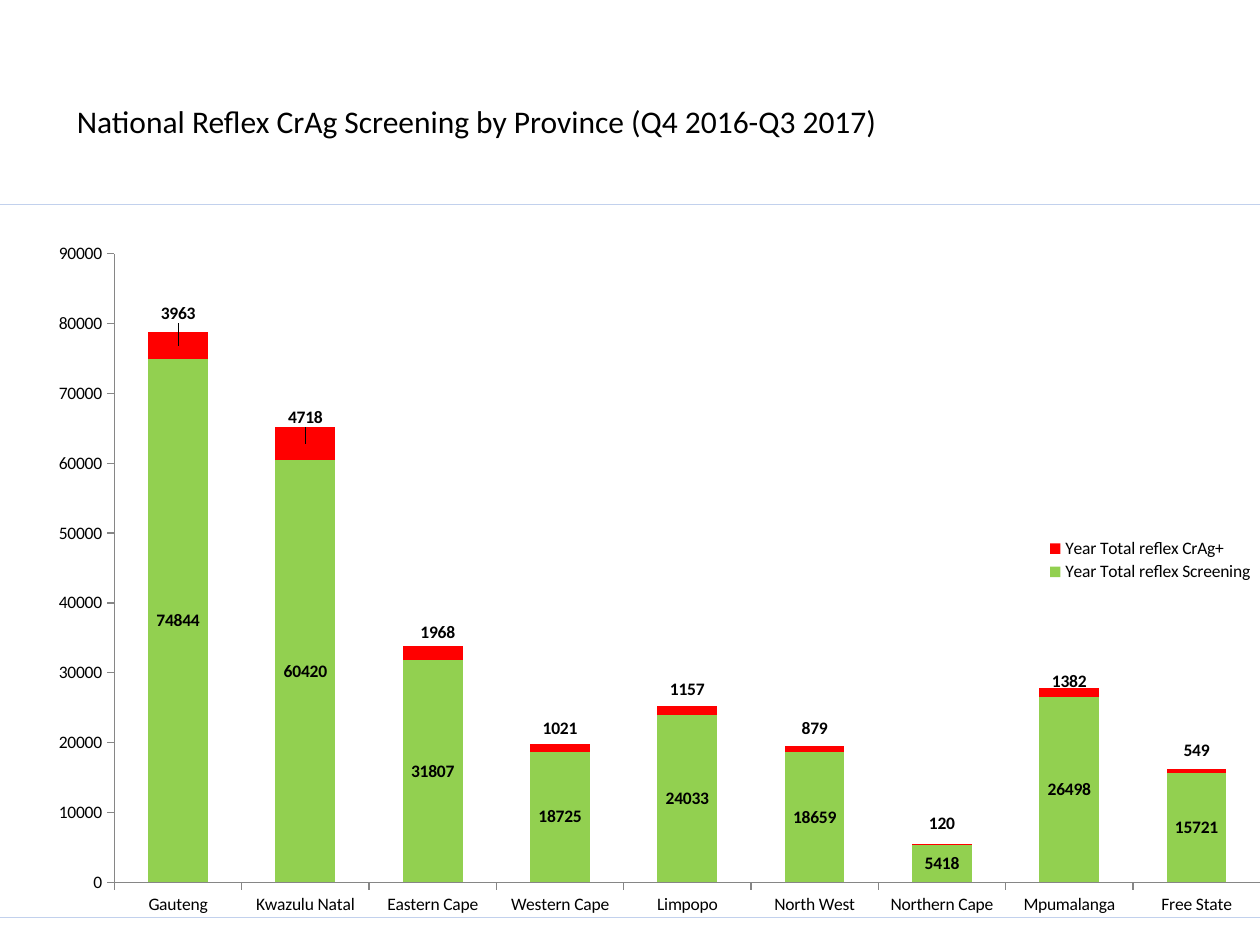
from dataclasses import dataclass

from lxml import etree
from pptx import Presentation
from pptx import util as u
from pptx.chart import data
from pptx.dml.color import RGBColor
from pptx.enum import chart as kinds
from pptx.enum import text
from pptx.oxml import parse_xml
from pptx.oxml.ns import nsdecls, qn


@dataclass(frozen=True)
class Theme:
    """Hold the colours, font and type sizes of the slide."""
    font: str = "Calibri"
    title_size: int = 18
    chart_size: int = 10
    ink: str = "000000"
    axis: str = "868686"
    border: str = "C2D1ED"
    screening: str = "92D050"
    positive: str = "FF0000"


THEME = Theme()
TITLE = "National Reflex CrAg Screening by Province (Q4 2016-Q3 2017)"
PROVINCES = (
    ("Gauteng", 74844, 3963, (0, -0.045)),
    ("Kwazulu Natal", 60420, 4718, (0, -0.037)),
    ("Eastern Cape", 31807, 1968, (0.004, -0.029)),
    ("Western Cape", 18725, 1021, (0, -0.028)),
    ("Limpopo", 24033, 1157, (0, -0.029)),
    ("North West", 18659, 879, (0, -0.028)),
    ("Northern Cape", 5418, 120, (0, -0.029)),
    ("Mpumalanga", 26498, 1382, (0, -0.016)),
    ("Free State", 15721, 549, (0, -0.029)),
)


def style_font(font, size, bold=False):
    """Apply the theme font and ink colour."""
    font.name, font.size, font.bold = THEME.font, u.Pt(size), bold
    font.color.rgb = RGBColor.from_string(THEME.ink)


def set_layout(parent, index, **values):
    """Give a chart part a manual layout as fractions of the chart."""
    for old in parent.findall(qn("c:layout")):
        parent.remove(old)
    layout = parse_xml(f"<c:layout {nsdecls('c')}><c:manualLayout/></c:layout>")
    for name, value in values.items():
        etree.SubElement(layout[0], qn(f"c:{name}")).set("val", str(value))
    parent.insert(index, layout)


def add_title(page, left, top, width, height):
    """Write the slide title on one line."""
    box = page.shapes.add_textbox(left, top, width, height)
    box.text_frame.word_wrap = False
    box.text_frame.auto_size = text.MSO_AUTO_SIZE.SHAPE_TO_FIT_TEXT
    span = box.text_frame.paragraphs[0].add_run()
    span.text = TITLE
    style_font(span.font, THEME.title_size)


def style_axes(chart):
    """Set the scale, ticks and lines of both axes."""
    chart.value_axis.minimum_scale = 0
    chart.value_axis.maximum_scale = 90000
    chart.value_axis.major_unit = 10000
    chart.value_axis.has_major_gridlines = False
    for axis in (chart.category_axis, chart.value_axis):
        axis.major_tick_mark = kinds.XL_TICK_MARK.OUTSIDE
        axis.minor_tick_mark = kinds.XL_TICK_MARK.NONE
        axis.format.line.color.rgb = RGBColor.from_string(THEME.axis)
        axis.format.line.width = u.Pt(0.75)
        style_font(axis.tick_labels.font, THEME.chart_size)


def style_series(series, color):
    """Fill a series and show its values in bold."""
    series.format.fill.solid()
    series.format.fill.fore_color.rgb = RGBColor.from_string(color)
    labels = series.data_labels
    labels.show_value = True
    style_font(labels.font, THEME.chart_size, bold=True)


def raise_labels(series):
    """Move each label of the top series above its column."""
    for index, (_, _, _, (across, down)) in enumerate(PROVINCES):
        label = series.points[index].data_label
        style_font(label.font, THEME.chart_size, bold=True)
    for part, province in zip(series.data_labels._element.findall(qn("c:dLbl")), PROVINCES):
        across, down = province[3]
        set_layout(part, 1, x=across, y=down)


def add_border(chart):
    """Draw a thin line around the chart."""
    chart._chartSpace.find(qn("c:chart")).addnext(parse_xml(
        f'<c:spPr {nsdecls("c", "a")}><a:noFill/><a:ln w="{u.Pt(0.75)}"><a:solidFill>'
        f'<a:srgbClr val="{THEME.border}"/></a:solidFill></a:ln></c:spPr>'))


def add_screening_chart(page, left, top, width, height):
    """Stack positive tests on screened tests for each province."""
    names, screened, positive, _ = zip(*PROVINCES)
    table = data.CategoryChartData()
    table.categories = names
    table.add_series("Year Total reflex Screening", screened)
    table.add_series("Year Total reflex CrAg+", positive)
    chart = page.shapes.add_chart(
        kinds.XL_CHART_TYPE.COLUMN_STACKED, left, top, width, height, table).chart
    chart.has_title = False
    style_font(chart.font, THEME.chart_size)
    style_axes(chart)
    plot = chart.plots[0]
    plot.gap_width, plot.overlap, plot.vary_by_categories = 113, 100, False
    for series, color in zip(plot.series, (THEME.screening, THEME.positive)):
        style_series(series, color)
    raise_labels(plot.series[1])
    chart.has_legend = True
    chart.legend.position = kinds.XL_LEGEND_POSITION.RIGHT
    chart.legend.include_in_layout = False
    style_font(chart.legend.font, THEME.chart_size)
    set_layout(chart.legend._element, 1, xMode="edge", yMode="edge",
               x=0.826, y=0.464, w=0.17, h=0.07)
    set_layout(chart._chartSpace.find(".//" + qn("c:plotArea")), 0,
               layoutTarget="inner", xMode="edge", yMode="edge",
               x=0.093, y=0.069, w=0.905, h=0.882)
    add_border(chart)


def main():
    """Build and save the deck."""
    deck = Presentation()
    deck.slide_width, deck.slide_height = u.Cm(25.4), u.Cm(19.05)
    page = deck.slides.add_slide(deck.slide_layouts[6])
    add_screening_chart(page, u.Cm(-0.08), u.Cm(4.11), u.Cm(25.55), u.Cm(14.4))
    add_title(page, u.Cm(1.3), u.Cm(1.93), u.Cm(17), u.Cm(1.02))
    deck.save("out.pptx")


if __name__ == "__main__":
    main()
